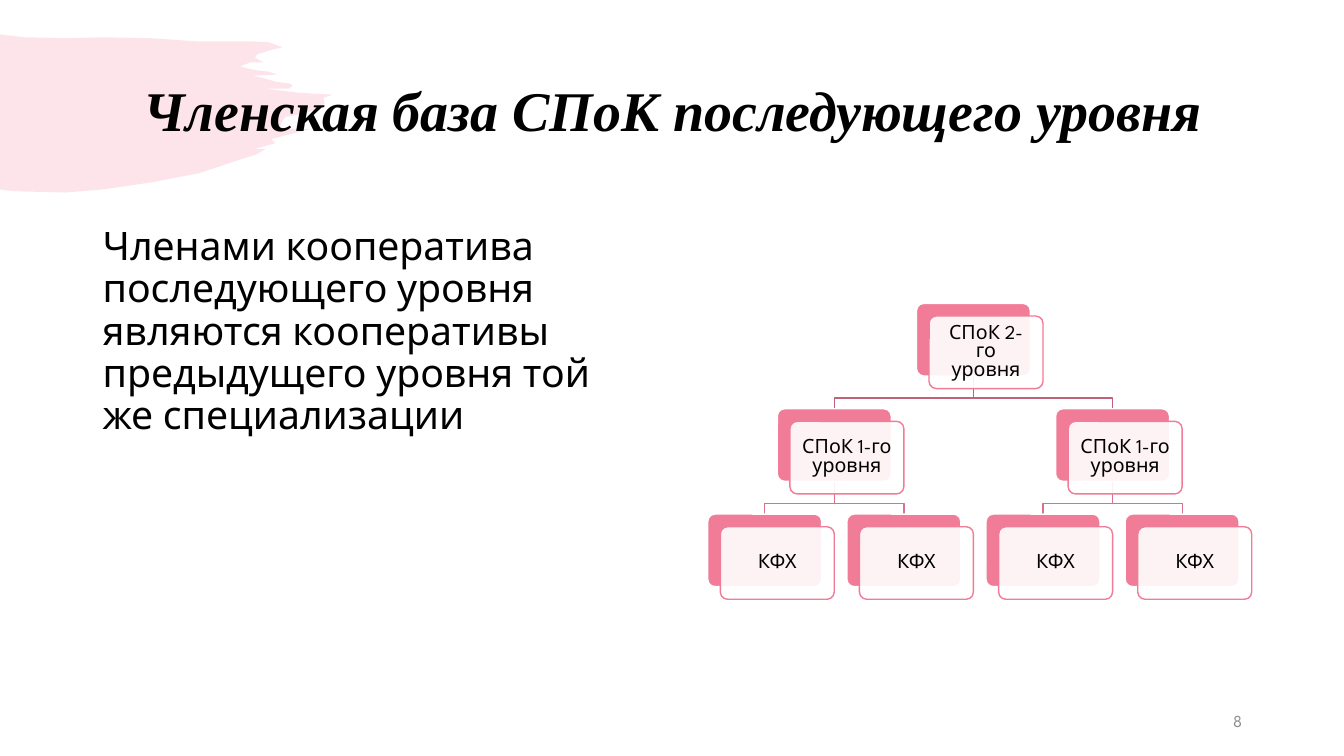
from lxml.etree import SubElement
from pptx import Presentation
from pptx.dml.color import RGBColor
from pptx.enum.shapes import MSO_SHAPE
from pptx.enum.text import MSO_ANCHOR as Anchor, PP_ALIGN as Align
from pptx.oxml.ns import qn
from pptx.util import Inches, Pt

TITLE = "Членская база СПоК последующего уровня"
BODY = ("Членами кооператива последующего уровня являются "
        "кооперативы предыдущего уровня той же специализации")
PAGE_NUMBER = "8"
FARM = ("КФХ", [])
FIRST_LEVEL = ("СПоК 1-го уровня", [FARM, FARM])
COOPERATIVES = ("СПоК 2-го уровня", [FIRST_LEVEL, FIRST_LEVEL])

BRUSH_STROKE = [
    (0, 0.34), (0.06, 0.35), (0.25, 0.37), (0.66, 0.38), (1.02, 0.37),
    (1.51, 0.38), (1.94, 0.41), (2.48, 0.41), (2.67, 0.42), (2.8, 0.47),
    (2.71, 0.49), (2.55, 0.54), (2.53, 0.57), (2.56, 0.59), (2.62, 0.62),
    (2.48, 0.62), (2.38, 0.66), (2.46, 0.68), (2.56, 0.7), (2.66, 0.71),
    (2.75, 0.74), (2.51, 0.75), (2.63, 0.78), (2.73, 0.81), (2.8, 0.82),
    (2.88, 0.83), (2.9, 0.85), (2.87, 0.88), (2.84, 0.88), (2.63, 0.88),
    (2.96, 0.92), (3.3, 0.94), (3.21, 0.97), (3.22, 1.03), (3.18, 1.06),
    (3.07, 1.11), (3, 1.13), (2.83, 1.16), (2.8, 1.2), (2.78, 1.25),
    (2.74, 1.28), (3.08, 1.28), (2.69, 1.38), (2.73, 1.42), (2.52, 1.48),
    (2.63, 1.48), (2.55, 1.53), (2.33, 1.6), (1.97, 1.72), (1.5, 1.81),
    (1.02, 1.88), (0.65, 1.91), (0.23, 1.9), (0.07, 1.89), (0, 1.88),
]

SANS, SERIF = "League Spartan", "Times New Roman"
PINK, WHITE, BLACK, GREY = "F07C98", "FFFFFF", "000000", "8C8C8C"
BRANCH_COLOURS = ["C0637A", "DA718A"]

TREE_LEFT, TREE_TOP = 7.02, 3.01
HALF_COLUMN, ROW = 0.69, 1.045
CARD_W, CARD_H = 1.13, 0.72
CARD_SHIFT = 0.125
BEND = 0.94

deck = Presentation()
deck.slide_width, deck.slide_height = Inches(13.33), Inches(7.5)
slide = deck.slides.add_slide(deck.slide_layouts[6])
shapes = slide.shapes


def colour(hex_string):
    return RGBColor.from_string(hex_string)


def set_opacity(shape, percent):
    fill = shape.fill._xPr.find(qn("a:solidFill"))
    SubElement(fill[0], qn("a:alpha"), val=str(percent * 1000))


def write(shape, text, size, hex_string, align, font=SANS, spacing=None,
          anchor=Anchor.MIDDLE):
    frame = shape.text_frame
    frame.word_wrap = True
    frame.vertical_anchor = anchor
    paragraph = frame.paragraphs[0]
    paragraph.text = text
    paragraph.alignment = align
    paragraph.line_spacing = spacing
    paragraph.font.name = font
    paragraph.font.size = Pt(size)
    paragraph.font.color.rgb = colour(hex_string)
    return paragraph


def text_box(box, *args, **options):
    return write(shapes.add_textbox(*map(Inches, box)), *args, **options)


def outline(points, close):
    corners = [(Inches(x), Inches(y)) for x, y in points]
    builder = shapes.build_freeform(*corners[0])
    builder.add_line_segments(corners[1:], close=close)
    shape = builder.convert_to_shape()
    shape.shadow.inherit = False
    return shape


def card(left, top, fill, line):
    shape = shapes.add_shape(MSO_SHAPE.ROUNDED_RECTANGLE, Inches(left),
                             Inches(top), Inches(CARD_W), Inches(CARD_H))
    shape.adjustments[0] = 0.1
    shape.shadow.inherit = False
    shape.fill.solid()
    shape.fill.fore_color.rgb = colour(fill)
    shape.line.color.rgb = colour(line)
    shape.line.width = Pt(1)
    return shape


def place(node, depth, first_leaf, nodes, branches):
    """Collect cards and branches; return the node's left edge and leaf count."""
    label, children = node
    top = TREE_TOP + depth * ROW
    lefts, leaves = [], 0
    for child in children:
        left, count = place(child, depth + 1, first_leaf + leaves, nodes, branches)
        lefts.append(left)
        leaves += count
    if children:
        left = sum(lefts) / len(lefts)
    else:
        left, leaves = TREE_LEFT + 2 * HALF_COLUMN * first_leaf, 1
    branches += [(left, child_left, top, depth) for child_left in lefts]
    nodes.append((label, left, top))
    return left, leaves


brush = outline(BRUSH_STROKE, close=True)
brush.fill.solid()
brush.fill.fore_color.rgb = colour(PINK)
set_opacity(brush, 20)
brush.line.fill.background()

title = text_box((0.92, 0.4, 11.5, 1.45), TITLE, 40, BLACK, Align.CENTER,
                 font=SERIF, spacing=0.9)
title.font.bold = title.font.italic = True
text_box((0.92, 2.2, 5.4, 4.55), BODY, 28, BLACK, Align.LEFT, spacing=0.9,
         anchor=Anchor.TOP).space_before = Pt(10)

nodes, branches = [], []
place(COOPERATIVES, 0, 0, nodes, branches)

for parent_left, child_left, top, depth in branches:
    start, end = parent_left + CARD_W / 2, child_left + CARD_W / 2
    branch = outline([(start, top + CARD_H), (start, top + BEND),
                      (end, top + BEND), (end, top + ROW)], close=False)
    branch.fill.background()
    branch.line.color.rgb = colour(BRANCH_COLOURS[depth])
    branch.line.width = Pt(1)

for label, left, top in nodes:
    card(left, top, PINK, WHITE)
    front = card(left + CARD_SHIFT, top + CARD_SHIFT, WHITE, PINK)
    set_opacity(front, 90)
    frame = front.text_frame
    frame.margin_left = frame.margin_right = Inches(0.08)
    frame.margin_top = frame.margin_bottom = Inches(0.08)
    write(front, label, 14, BLACK, Align.CENTER, spacing=0.8)

text_box((9.42, 6.95, 3, 0.4), PAGE_NUMBER, 12, GREY, Align.RIGHT)

deck.save("out.pptx")
